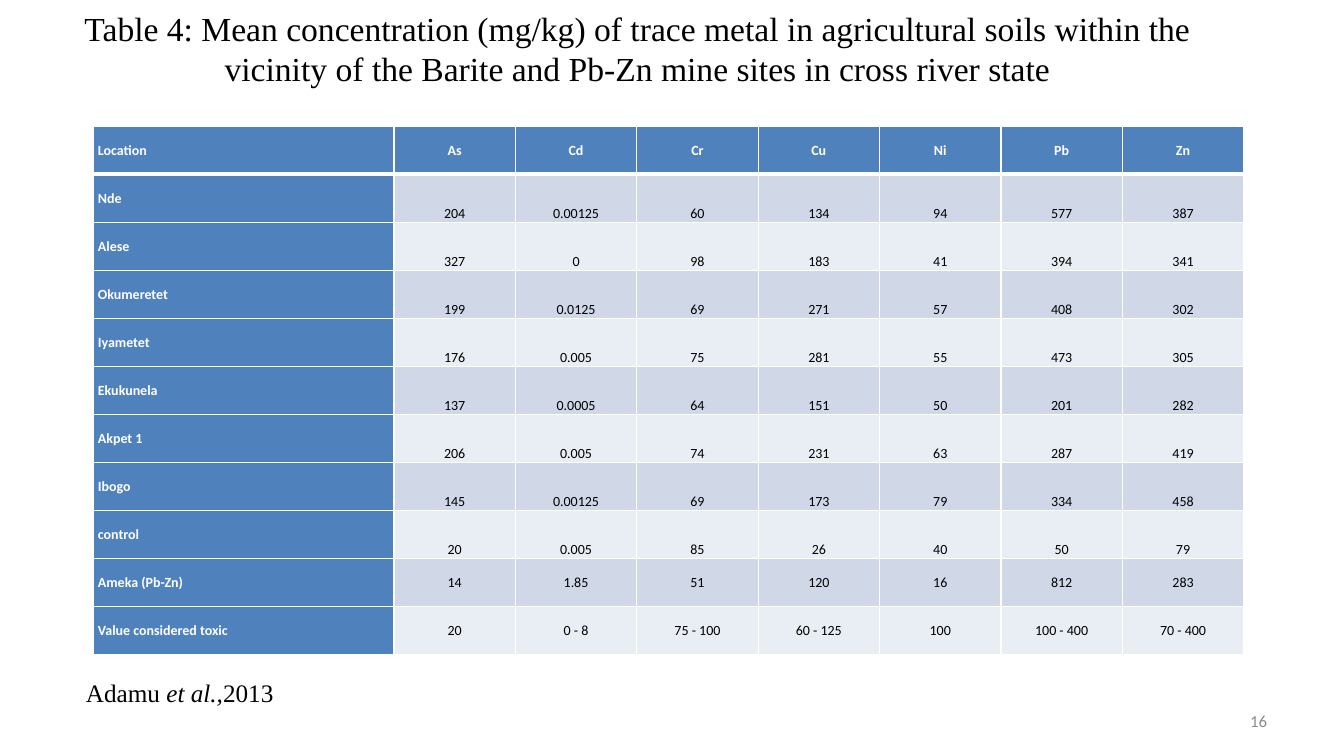
"""Builds the slide with the table of trace metals in soils near mine sites."""
from lxml import etree
from pptx import Presentation
from pptx import util as u
from pptx.dml.color import RGBColor
from pptx.enum import text
from pptx.oxml import ns

SCALE = 914400 / 100.8
THEME = {
    "ink": "000000", "white": "FFFFFF", "gray": "8C8C8C",
    "head": "4F81BD", "bands": ("E9EDF4", "D0D8E8"),
    "serif": "Times New Roman", "sans": "Calibri",
    "title": 24, "source": 18, "page": 12, "cell": 10,
}
LEFT, CENTER, RIGHT = text.PP_ALIGN.LEFT, text.PP_ALIGN.CENTER, text.PP_ALIGN.RIGHT
TOP, MIDDLE, BOTTOM = text.MSO_ANCHOR.TOP, text.MSO_ANCHOR.MIDDLE, text.MSO_ANCHOR.BOTTOM

HEADS = ["Location", "As", "Cd", "Cr", "Cu", "Ni", "Pb", "Zn"]
SITES = [
    ["Nde", "204", "0.00125", "60", "134", "94", "577", "387"],
    ["Alese", "327", "0", "98", "183", "41", "394", "341"],
    ["Okumeretet", "199", "0.0125", "69", "271", "57", "408", "302"],
    ["Iyametet", "176", "0.005", "75", "281", "55", "473", "305"],
    ["Ekukunela", "137", "0.0005", "64", "151", "50", "201", "282"],
    ["Akpet 1", "206", "0.005", "74", "231", "63", "287", "419"],
    ["Ibogo", "145", "0.00125", "69", "173", "79", "334", "458"],
    ["control", "20", "0.005", "85", "26", "40", "50", "79"],
]
LIMITS = [
    ["Ameka (Pb-Zn)", "14", "1.85", "51", "120", "16", "812", "283"],
    ["Value considered toxic", "20", "0 - 8", "75 - 100", "60 - 125", "100",
     "100 - 400", "70 - 400"],
]


def px(n):
    return u.Emu(round(n * SCALE))


def write(frame, words, size, font="serif", color="ink", align=LEFT,
          bold=False, slant=None, space=None):
    """Fill the frame with words, a string or a list of strings; slant is the italic one."""
    frame.word_wrap = True
    para = frame.paragraphs[0]
    para.alignment = align
    if space:
        para.line_spacing = space
    for part in [words] if isinstance(words, str) else words:
        run = para.add_run()
        run.text = part
        run.font.name = THEME[font]
        run.font.size = u.Pt(THEME[size])
        run.font.bold = bold
        run.font.italic = part == slant
        run.font.color.rgb = RGBColor.from_string(THEME[color])


deck = Presentation()
deck.slide_width, deck.slide_height = px(1344), px(756)
slide = deck.slides.add_slide(deck.slide_layouts[6])

title = ("Table 4: Mean concentration (mg/kg) of trace metal in agricultural soils "
         "within the vicinity of the Barite and Pb-Zn mine sites in cross river state")
labels = [
    ((58, 0, 1159, 96), MIDDLE, title, {"size": "title", "align": CENTER}),
    ((964, 701, 313, 40), MIDDLE, "16",
     {"size": "page", "font": "sans", "color": "gray", "align": RIGHT}),
    ((76, 672, 462, 40), TOP, ["Adamu ", "et al.,", "2013"],
     {"size": "source", "slant": "et al.,"}),
]
for place, anchor, words, form in labels:
    frame = slide.shapes.add_textbox(*map(px, place)).text_frame
    frame.vertical_anchor = anchor
    write(frame, words, **form)

rows = [HEADS] + SITES + LIMITS
wide, high, first = 1151, 529, 301
table = slide.shapes.add_table(len(rows), len(HEADS), px(93), px(126),
                               px(wide), px(high)).table
for c, col in enumerate(table.columns):
    col.width = px((wide - first) / (len(HEADS) - 1) if c else first)
for row in table.rows:
    row.height = px(high / len(rows))

for r, row in enumerate(rows):
    for c, words in enumerate(row):
        cell = table.cell(r, c)
        head = r == 0 or c == 0
        cell.margin_left = cell.margin_right = px(5)
        cell.margin_top = cell.margin_bottom = 0
        cell.vertical_anchor = BOTTOM if not head and r <= len(SITES) else MIDDLE
        props = cell._tc.get_or_add_tcPr()
        for side in "LRTB":
            thick = (r, side) in [(0, "B"), (1, "T")]
            line = etree.SubElement(props, ns.qn("a:ln" + side),
                                    w=str(u.Pt(3 if thick else 1)))
            fill = etree.SubElement(line, ns.qn("a:solidFill"))
            etree.SubElement(fill, ns.qn("a:srgbClr"), val=THEME["white"])
        cell.fill.solid()
        cell.fill.fore_color.rgb = RGBColor.from_string(
            THEME["head"] if head else THEME["bands"][r % 2])
        write(cell.text_frame, words, "cell", font="sans", bold=head, space=1.07,
              color="white" if head else "ink", align=CENTER if c else LEFT)

deck.save("out.pptx")
